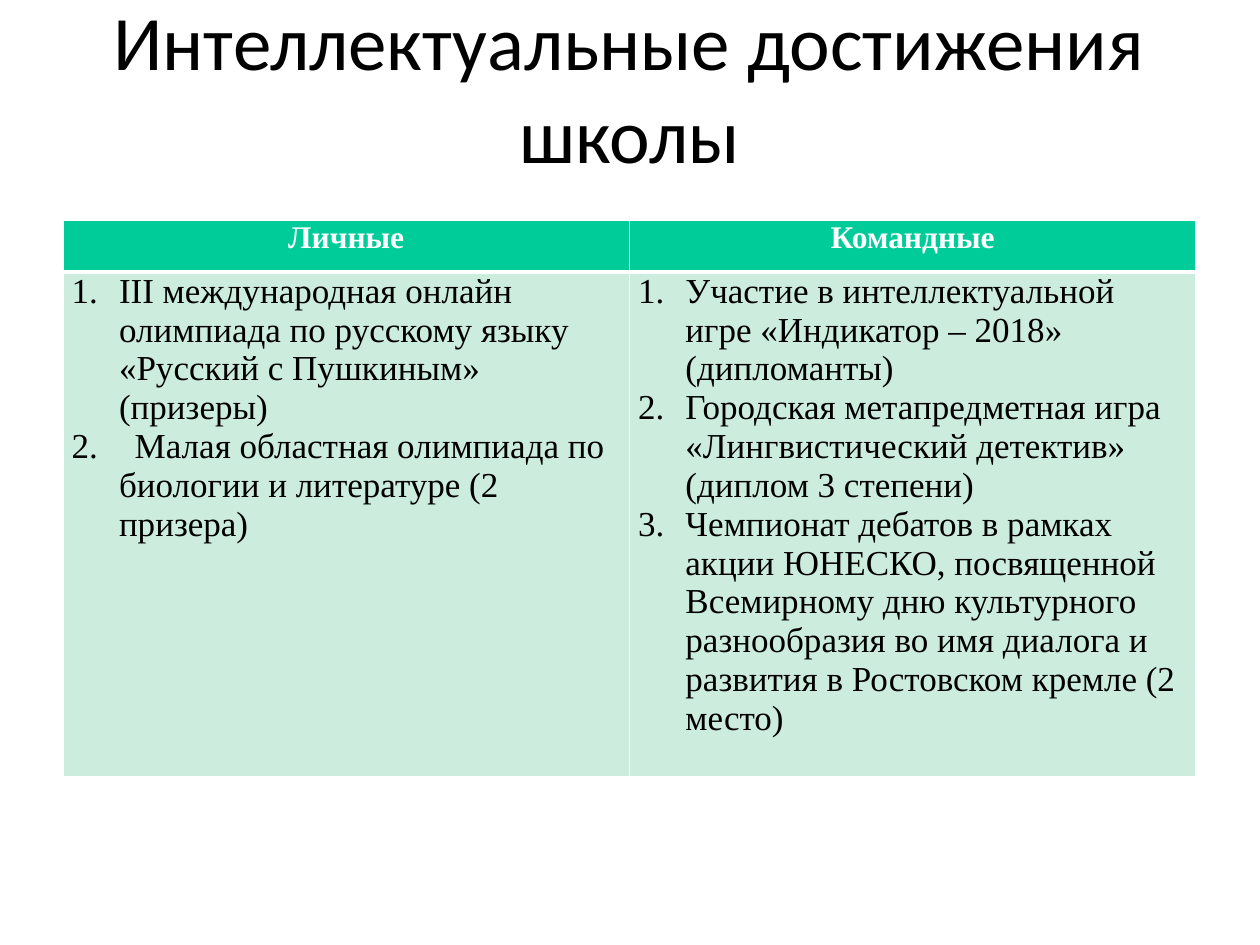
from dataclasses import dataclass

from lxml import etree
from pptx import Presentation
from pptx.dml.color import RGBColor
from pptx.enum.text import MSO_ANCHOR, MSO_AUTO_SIZE, PP_ALIGN
from pptx.oxml.ns import qn
from pptx.util import Pt

CENTER, LEFT = PP_ALIGN.CENTER, PP_ALIGN.LEFT
MIDDLE, TOP = MSO_ANCHOR.MIDDLE, MSO_ANCHOR.TOP
NO_FIT = MSO_AUTO_SIZE.NONE


@dataclass(frozen=True)
class Theme:
    head: str = "00CC99"
    body: str = "CCECDE"
    dark: str = "000000"
    light: str = "FFFFFF"
    sans: str = "Calibri"
    serif: str = "Times New Roman"
    title_size: int = 44
    head_size: int = 18
    body_size: int = 20


@dataclass(frozen=True)
class Column:
    head: str
    items: tuple[str, ...]


THEME = Theme()
WIDTH = 647.4
HEAD_H, BODY_H = 29.4, 288.6
INDENT = 27
THIN, THICK = 1, 3

COLUMNS = (
    Column("Личные", (
        "III международная онлайн олимпиада по русскому языку "
        "«Русский с Пушкиным» (призеры)",
        "\tМалая областная олимпиада по биологии и литературе (2 призера)",
    )),
    Column("Командные", (
        "Участие в интеллектуальной игре «Индикатор – 2018» (дипломанты)",
        "Городская метапредметная игра «Лингвистический детектив» "
        "(диплом 3 степени)",
        "Чемпионат дебатов в рамках акции ЮНЕСКО, посвященной Всемирному дню "
        "культурного разнообразия во имя диалога и развития "
        "в Ростовском кремле (2 место)",
    )),
)


def write(frame, lines: tuple[str, ...], *, size: int, color: str,
          font: str = THEME.serif, bold: bool = False, align=LEFT,
          numbered: bool = False) -> None:
    """Fill a text frame with one paragraph per line."""
    for i, line in enumerate(lines):
        para = frame.add_paragraph() if i else frame.paragraphs[0]
        para.alignment = align
        run = para.add_run()
        run.text = line
        run.font.name, run.font.size, run.font.bold = font, Pt(size), bold
        run.font.color.rgb = RGBColor.from_string(color)
        if numbered:
            props = para._p.get_or_add_pPr()
            props.set("marL", str(Pt(INDENT)))
            props.set("indent", str(Pt(-INDENT)))
            etree.SubElement(props, qn("a:buFont"), typeface="+mj-lt")
            etree.SubElement(props, qn("a:buAutoNum"), type="arabicPeriod")


def edge(cell, top: float, bottom: float) -> None:
    """Draw white borders; the sides are always thin."""
    props = cell._tc.get_or_add_tcPr()
    sides = {"L": THIN, "R": THIN, "T": top, "B": bottom}
    for i, (side, width) in enumerate(sides.items()):
        line = etree.Element(qn(f"a:ln{side}"), w=str(Pt(width)))
        fill = etree.SubElement(line, qn("a:solidFill"))
        etree.SubElement(fill, qn("a:srgbClr"), val=THEME.light)
        props.insert(i, line)


def style(cell, fill: str, top: float, bottom: float) -> None:
    """Set the fill, margins and borders of a cell."""
    cell.fill.solid()
    cell.fill.fore_color.rgb = RGBColor.from_string(fill)
    cell.margin_left = cell.margin_right = Pt(5)
    cell.margin_top = cell.margin_bottom = Pt(0)
    cell.vertical_anchor = TOP
    edge(cell, top, bottom)


def add_title(slide, text: str) -> None:
    title = slide.shapes.title
    title.left, title.top = Pt(36), Pt(10)
    title.width, title.height = Pt(WIDTH), Pt(78.5)
    frame = title.text_frame
    frame.auto_size, frame.vertical_anchor = NO_FIT, MIDDLE
    frame.word_wrap = True
    write(frame, (text,), size=THEME.title_size, color=THEME.dark,
          font=THEME.sans, align=CENTER)


def add_grid(slide, columns: tuple[Column, ...]) -> None:
    grid = slide.shapes.add_table(2, len(columns), Pt(36), Pt(126),
                                  Pt(WIDTH), Pt(HEAD_H + BODY_H)).table
    grid.rows[0].height, grid.rows[1].height = Pt(HEAD_H), Pt(BODY_H)
    for i, col in enumerate(columns):
        grid.columns[i].width = Pt(WIDTH / len(columns))
        head, body = grid.cell(0, i), grid.cell(1, i)
        style(head, THEME.head, THIN, THICK)
        write(head.text_frame, (col.head,), size=THEME.head_size,
              color=THEME.light, bold=True, align=CENTER)
        style(body, THEME.body, THICK, THIN)
        write(body.text_frame, col.items, size=THEME.body_size,
              color=THEME.dark, numbered=True)


def main() -> None:
    deck = Presentation()
    deck.slide_width, deck.slide_height = Pt(720), Pt(540)
    slide = deck.slides.add_slide(deck.slide_layouts[5])
    # Heading
    add_title(slide, "Интеллектуальные достижения школы")
    # Achievements table
    add_grid(slide, COLUMNS)
    deck.save("out.pptx")


if __name__ == "__main__":
    main()
